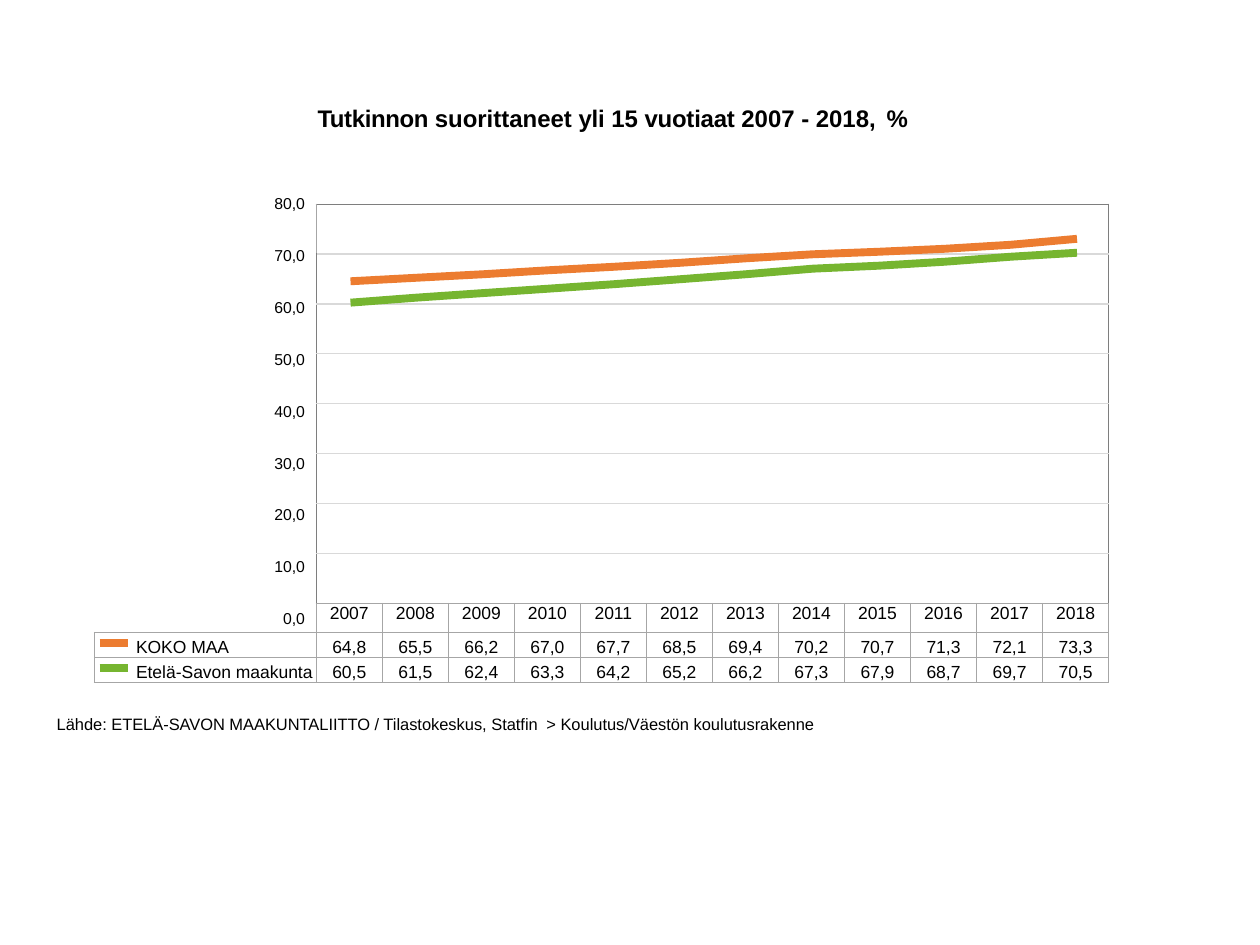
from lxml.etree import SubElement
from pptx import Presentation
from pptx.dml.color import RGBColor
from pptx.enum.shapes import MSO_CONNECTOR as Connector
from pptx.enum.text import PP_ALIGN as Align
from pptx.oxml.ns import qn
from pptx.util import Inches, Pt

BLACK = RGBColor(0x00, 0x00, 0x00)
ORANGE = RGBColor(0xEC, 0x7C, 0x30)
GREEN = RGBColor(0x76, 0xB5, 0x30)
TABLE_GRAY = RGBColor(0xA6, 0xA6, 0xA6)
FRAME_GRAY = RGBColor(0x7E, 0x7E, 0x7E)
GRID_GRAY = RGBColor(0xD9, 0xD9, 0xD9)

YEARS = [str(year) for year in range(2007, 2019)]
REGIONS = [
    ("KOKO MAA", ORANGE,
     [64.8, 65.5, 66.2, 67.0, 67.7, 68.5, 69.4, 70.2, 70.7, 71.3, 72.1, 73.3]),
    ("Etelä-Savon maakunta", GREEN,
     [60.5, 61.5, 62.4, 63.3, 64.2, 65.2, 66.2, 67.3, 67.9, 68.7, 69.7, 70.5]),
]
TITLE = [("Tutkinnon ", -0.2), ("suorittaneet ", 0), ("yli ", -0.1), ("15 ", 0),
         ("vuotiaat ", -0.1), ("2007 - 2018,", 0), (" ", 2.3), ("%", 0)]
SOURCE = [("Lähde: ETELÄ-SAVON MAAKUNTALIITTO / Tilastokeskus, Statfin", 0),
          (" ", 2.6), ("> Koulutus/Väestön koulutusrakenne", 0)]

MAXIMUM = 80
BANDS = 8
NAME_WIDTH = 1.76
PLOT_HEIGHT = 3.17
HEADER_HEIGHT = 0.23
ROW_HEIGHT = 0.2
NO_MARGINS = {"margin_left": 0, "margin_right": 0, "margin_top": 0, "margin_bottom": 0}


def apply(target, formats):
    for attribute, value in formats.items():
        setattr(target, attribute, value)


def decimal(value):
    return f"{value:.1f}".replace(".", ",")


def set_font(font, size, bold=False):
    apply(font, {"name": "Arial", "size": Pt(size), "bold": bold})
    font.color.rgb = BLACK


def set_line(line, color):
    line.color.rgb = color
    line.width = Pt(4.5)


def add_frame(slide, box, wrap):
    frame = slide.shapes.add_textbox(*map(Inches, box)).text_frame
    apply(frame, {**NO_MARGINS, "word_wrap": wrap})
    return frame


def add_label(slide, box, pieces, size, bold=False):
    paragraph = add_frame(slide, box, False).paragraphs[0]
    for text, spacing in pieces:
        run = paragraph.add_run()
        run.text = text
        set_font(run.font, size, bold)
        if spacing:
            run.font._element.set("spc", str(round(spacing * 100)))


def add_share_axis(slide, box):
    frame = add_frame(slide, box, True)
    for band in range(BANDS + 1):
        paragraph = frame.add_paragraph() if band else frame.paragraphs[0]
        paragraph.text = decimal(MAXIMUM * (1 - band / BANDS))
        paragraph.alignment = Align.RIGHT
        if band:
            paragraph.space_before = Pt(18.8)
        set_font(paragraph.font, 9)


def set_borders(cell, colors):
    properties = cell._tc.get_or_add_tcPr()
    for position, side in enumerate("LRTB"):
        border = properties.makeelement(qn(f"a:ln{side}"), {"w": str(Pt(0.75))})
        if side in colors:
            fill = SubElement(border, qn("a:solidFill"))
            SubElement(fill, qn("a:srgbClr"), val=str(colors[side]))
        else:
            SubElement(border, qn("a:noFill"))
        properties.insert(position, border)


def border_colors(row, column):
    if column == 0 and row <= BANDS:
        return {"R": TABLE_GRAY, **({"B": TABLE_GRAY} if row in (0, BANDS) else {})}
    if row >= BANDS:
        return dict.fromkeys("LRTB", TABLE_GRAY)
    colors = {"T": GRID_GRAY if row else FRAME_GRAY,
              "B": GRID_GRAY if row < BANDS - 1 else TABLE_GRAY}
    if column == 1:
        colors["L"] = FRAME_GRAY if row else TABLE_GRAY
    if column in (1, len(YEARS)):
        colors["R"] = FRAME_GRAY
    return colors


def add_share_table(slide, box):
    rows = [[""] * (len(YEARS) + 1) for _ in range(BANDS)] + [["", *YEARS]]
    rows += [[name, *map(decimal, shares)] for name, _, shares in REGIONS]
    table = slide.shapes.add_table(len(rows), len(rows[0]), *map(Inches, box)).table
    apply(table, {"first_row": False, "horz_banding": False})
    year_width = (box[2] - NAME_WIDTH) / len(YEARS)
    for index, column in enumerate(table.columns):
        column.width = Inches(year_width if index else NAME_WIDTH)
    heights = [PLOT_HEIGHT / BANDS] * BANDS + [HEADER_HEIGHT] + [ROW_HEIGHT] * len(REGIONS)
    for row, height in zip(table.rows, heights):
        row.height = Inches(height)

    for row_index, texts in enumerate(rows):
        for column_index, text in enumerate(texts):
            cell = table.cell(row_index, column_index)
            apply(cell, NO_MARGINS)
            if row_index > BANDS and not column_index:
                cell.margin_left = Inches(0.33)
            cell.fill.background()
            paragraph = cell.text_frame.paragraphs[0]
            paragraph.text = text
            paragraph.alignment = Align.CENTER if column_index else Align.LEFT
            if row_index > BANDS:
                paragraph.line_spacing = Pt(14.3 if column_index else 14.1)
            set_font(paragraph.font, 10)
            set_borders(cell, border_colors(row_index, column_index))

    table.cell(0, 0).merge(table.cell(BANDS, 0))
    for band in range(BANDS):
        table.cell(band, 1).merge(table.cell(band, len(YEARS)))


def add_trend_lines(slide, box):
    left, top, width, height = box
    step = width / len(YEARS)
    for _, color, shares in REGIONS:
        points = [(Inches(left + (index + 0.5) * step),
                   Inches(top + height * (1 - share / MAXIMUM)))
                  for index, share in enumerate(shares)]
        builder = slide.shapes.build_freeform(*points[0])
        builder.add_line_segments(points[1:], close=False)
        trend = builder.convert_to_shape()
        trend.shadow.inherit = False
        trend.fill.background()
        set_line(trend.line, color)


def add_legend_keys(slide, box):
    left, top, width, gap = box
    for index, (_, color, _) in enumerate(REGIONS):
        y = Inches(top + index * gap)
        key = slide.shapes.add_connector(
            Connector.STRAIGHT, Inches(left), y, Inches(left + width), y)
        set_line(key.line, color)
        SubElement(key._element.spPr, qn("a:effectLst"))


def main():
    presentation = Presentation()
    apply(presentation, {"slide_width": Inches(10), "slide_height": Inches(7.5)})
    slide = presentation.slides.add_slide(presentation.slide_layouts[6])
    add_legend_keys(slide, (0.79, 5.1, 0.23, ROW_HEIGHT))
    add_share_table(slide, (0.75, 1.62, 8.05,
                            PLOT_HEIGHT + HEADER_HEIGHT + 2 * ROW_HEIGHT))
    add_trend_lines(slide, (2.52, 1.63, 6.29, PLOT_HEIGHT))
    add_share_axis(slide, (2.15, 1.54, 0.27, 3.41))
    add_label(slide, (0.45, 5.67, 6.12, 0.16), SOURCE, 9.4)
    add_label(slide, (2.52, 0.82, 4.72, 0.23), TITLE, 13.7, True)
    presentation.save("out.pptx")


if __name__ == "__main__":
    main()
